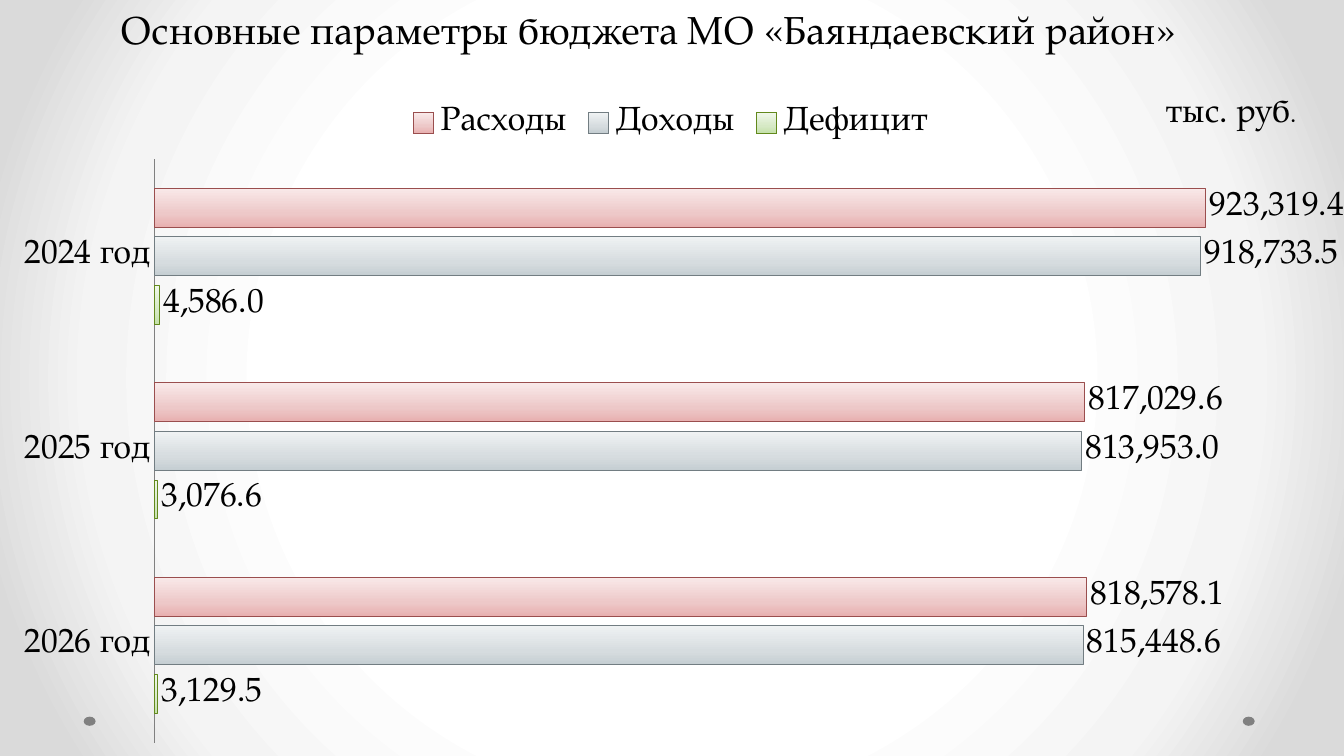
from dataclasses import dataclass

from lxml import etree
from pptx import Presentation
from pptx.chart.data import CategoryChartData
from pptx.dml.color import RGBColor
from pptx.enum.chart import (XL_CHART_TYPE, XL_LABEL_POSITION,
                             XL_LEGEND_POSITION, XL_TICK_MARK)
from pptx.enum.shapes import MSO_SHAPE
from pptx.oxml import parse_xml
from pptx.oxml.ns import nsdecls, qn
from pptx.util import Cm, Pt

BAR = XL_CHART_TYPE.BAR_CLUSTERED
OUT = XL_LABEL_POSITION.OUTSIDE_END
TOP = XL_LEGEND_POSITION.TOP
NONE = XL_TICK_MARK.NONE
OVAL = MSO_SHAPE.OVAL

FONT = "TeX Gyre Pagella"
BLACK, GREY = "000000", "808080"
FORM = "#,##0.0"
YEARS = ("2026 год", "2025 год", "2024 год")
LINEAR = '<a:lin ang="16200000" scaled="1"/>'
ROUND = ('<a:path path="circle"><a:fillToRect l="50000" t="50000" '
         'r="50000" b="50000"/></a:path>')


@dataclass
class Series:
    name: str
    values: tuple[float, ...]
    shades: tuple[str, str, str]
    line: str


@dataclass
class Label:
    box: tuple[float, float, float, float]
    runs: tuple[tuple[str, int], ...]
    wrap: bool


SERIES = (
    Series("Дефицит", (3129.5, 3076.6, 4586.0),
           ("C5E1AB", "D6E9C5", "EFF7E9"), "62891C"),
    Series("Доходы", (815448.6, 813953.0, 918733.5),
           ("C5CED2", "D6DCDF", "EFF2F3"), "727D82"),
    Series("Расходы", (818578.1, 817029.6, 923319.4),
           ("E8B0B0", "EDC8C8", "F9E9E9"), "9A4E4E"),
)
LABELS = (
    Label((2.79, 0, 28.32, 1.45),
          (("Основные параметры бюджета МО «Баяндаевский район»", 28),), True),
    Label((29.13, 2.11, 3.99, 1.27), (("тыс. руб", 24), (".", 18)), False),
)


def color(code: str) -> RGBColor:
    return RGBColor.from_string(code)


def style(item, values: dict) -> None:
    for name, value in values.items():
        setattr(item, name, value)


def set_font(font, size: int) -> None:
    style(font, {"name": FONT, "size": Pt(size), "bold": False})
    font.color.rgb = color(BLACK)


def blend(fill, root, stops, shape: str) -> None:
    """Give the fill found under root the listed (percent, colour) stops."""
    fill.gradient()
    old = next(root.iter(qn("a:gradFill")))
    marks = "".join(f'<a:gs pos="{pos * 1000}"><a:srgbClr val="{code}"/></a:gs>'
                    for pos, code in stops)
    new = parse_xml(f'<a:gradFill {nsdecls("a")} rotWithShape="1">'
                    f'<a:gsLst>{marks}</a:gsLst>{shape}</a:gradFill>')
    old.getparent().replace(old, new)


def place(root, before: str, values: dict) -> None:
    """Add a manual layout ahead of the named child, or after legendPos."""
    for old in root.findall(qn("c:layout")):
        root.remove(old)
    layout = etree.Element(qn("c:layout"))
    manual = etree.SubElement(layout, qn("c:manualLayout"))
    for name, value in values.items():
        etree.SubElement(manual, qn(f"c:{name}")).set("val", str(value))
    root.find(qn(before)).addprevious(layout)


def add_dot(slide, left: float) -> None:
    dot = slide.shapes.add_shape(OVAL, Cm(left), Cm(18.06), Cm(0.3), Cm(0.23))
    dot.shadow.inherit = False
    dot.fill.solid()
    dot.fill.fore_color.rgb = color(GREY)
    dot.line.fill.background()


def add_label(slide, label: Label) -> None:
    frame = slide.shapes.add_textbox(*map(Cm, label.box)).text_frame
    frame.word_wrap = label.wrap
    for text, size in label.runs:
        run = frame.paragraphs[0].add_run()
        run.text = text
        set_font(run.font, size)


def paint(bars, item: Series) -> None:
    blend(bars.format.fill, bars._element,
          zip((0, 35, 100), item.shades), LINEAR)
    bars.invert_if_negative = False
    bars.format.line.color.rgb = color(item.line)
    bars.format.line.width = Pt(0.75)
    labels = bars.data_labels
    style(labels, {"show_value": True, "number_format": FORM,
                   "number_format_is_linked": False, "position": OUT})
    set_font(labels.font, 24)


def add_budget(slide) -> None:
    data = CategoryChartData(number_format=FORM)
    data.categories = YEARS
    for item in SERIES:
        data.add_series(item.name, item.values)
    chart = slide.shapes.add_chart(
        BAR, Cm(0), Cm(2.34), Cm(33.87), Cm(16.71), data).chart
    style(chart, {"has_title": False, "has_legend": True})
    set_font(chart.font, 10)
    plot = chart.plots[0]
    style(plot, {"gap_width": 150, "overlap": -25, "vary_by_categories": False})
    for bars, item in zip(plot.series, SERIES):
        paint(bars, item)

    years = chart.category_axis
    style(years, {"major_tick_mark": NONE, "minor_tick_mark": NONE,
                  "has_major_gridlines": False})
    years.format.line.color.rgb = color(GREY)
    set_font(years.tick_labels.font, 24)
    style(chart.value_axis, {"visible": False, "has_major_gridlines": False,
                             "minimum_scale": 0, "maximum_scale": 1000000})

    legend = chart.legend
    style(legend, {"position": TOP, "include_in_layout": False})
    set_font(legend.font, 24)
    place(legend._element, "c:overlay",
          {"xMode": "edge", "yMode": "edge", "x": 0.3, "y": 0.01})
    place(plot._element.getparent(), "c:barChart",
          {"layoutTarget": "inner", "xMode": "edge", "yMode": "edge",
           "x": 0.115, "y": 0.1, "w": 0.85, "h": 0.88})


def main() -> None:
    deck = Presentation()
    style(deck, {"slide_width": Cm(33.87), "slide_height": Cm(19.05)})
    slide = deck.slides.add_slide(deck.slide_layouts[6])
    blend(slide.background.fill, slide._element,
          ((50, "FFFFFF"), (76, "F4F4F4"), (92, "DADADA")), ROUND)
    for left in (31.32, 2.11):
        add_dot(slide, left)
    add_budget(slide)
    for label in LABELS:
        add_label(slide, label)
    deck.save("out.pptx")


if __name__ == "__main__":
    main()
